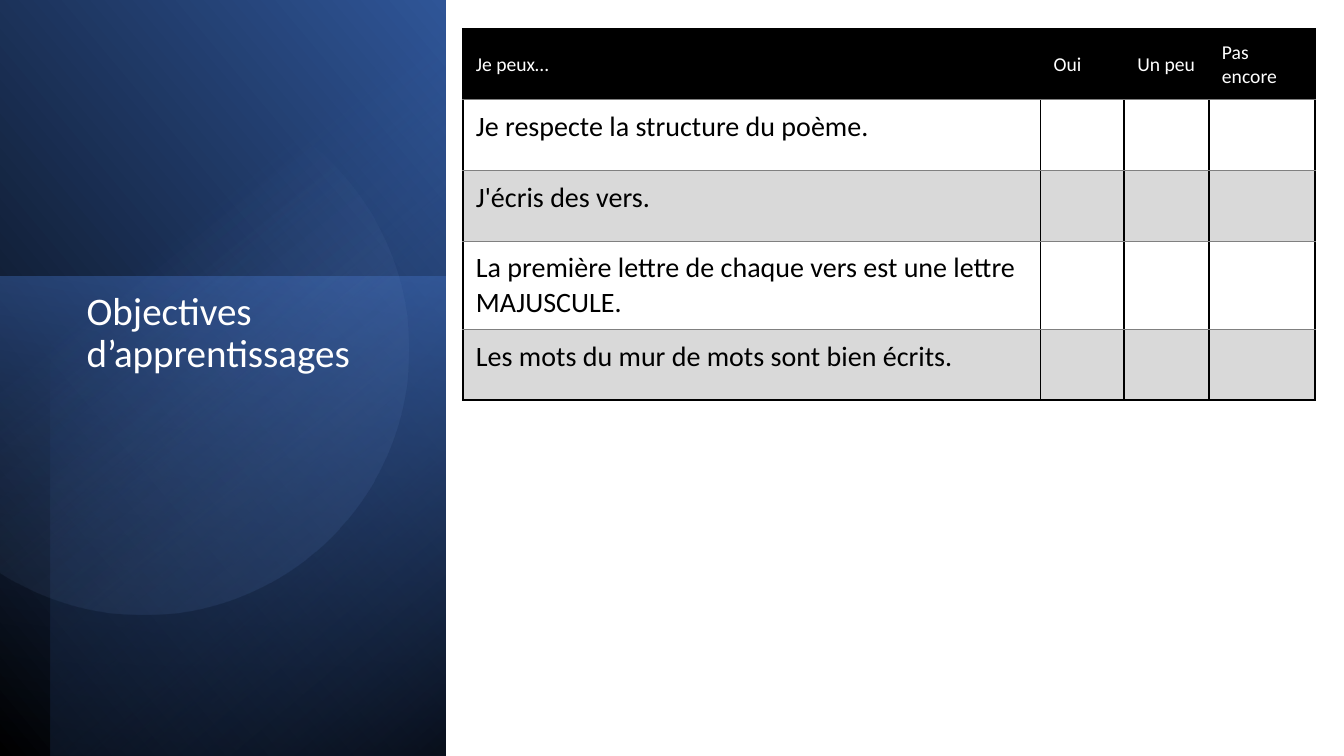
from dataclasses import dataclass
from math import cos, radians, sin, tan

from lxml.etree import SubElement as Sub
from pptx import Presentation
from pptx.dml.color import RGBColor as RGB
from pptx.enum.shapes import MSO_SHAPE as Kind
from pptx.enum.text import MSO_ANCHOR as Anchor, MSO_AUTO_SIZE as Fit, PP_ALIGN as Align
from pptx.oxml.ns import qn
from pptx.util import Inches, Pt


@dataclass(frozen=True)
class Theme:
    font: str = "Calibri"
    black: str = "000000"
    white: str = "FFFFFF"
    band: str = "D9D9D9"
    rule: str = "808080"
    navy: str = "203864"
    deep: str = "2F5597"
    blue: str = "4472C4"
    pale: str = "8FAADC"
    title: float = 27.9
    head: float = 14
    body: float = 20
    thick: float = 1.5
    thin: float = 0.5


def write(frame, text, size, color, font, spacing=None):
    frame.text = text
    para = frame.paragraphs[0]
    para.alignment = Align.LEFT
    if spacing:
        para.line_spacing = spacing
    style = para.font
    style.name, style.size, style.bold = font, Pt(size), False
    style.color.rgb = RGB.from_string(color)


def blend(shape, stops, angle):
    """Fill with a linear gradient; stops are (position, colour, opacity) in percent."""
    shape.shadow.inherit = False
    shape.line.fill.background()
    shape.fill.gradient()
    grad = shape.element.spPr.find(qn("a:gradFill"))
    grad.set("rotWithShape", "1")
    for child in list(grad):
        grad.remove(child)
    group = Sub(grad, qn("a:gsLst"))
    for pos, color, alpha in stops:
        stop = Sub(group, qn("a:gs"), pos=str(pos * 1000))
        tint = Sub(stop, qn("a:srgbClr"), val=color)
        if alpha < 100:
            Sub(tint, qn("a:alpha"), val=str(alpha * 1000))
    Sub(grad, qn("a:lin"), ang=str(angle * 60000), scaled="0")


def border(cell, **sides):
    """Draw cell edges; each side L, R, T or B is (colour, points)."""
    props = cell._tc.get_or_add_tcPr()
    for side, (color, width) in sides.items():
        line = Sub(props, qn(f"a:ln{side}"), w=str(Pt(width)))
        Sub(Sub(line, qn("a:solidFill")), qn("a:srgbClr"), val=color)


class Deck:
    def __init__(self, theme):
        self.theme = theme
        self.file = Presentation()
        self.file.slide_width, self.file.slide_height = Inches(13.33), Inches(7.5)
        self.slide = self.file.slides.add_slide(self.file.slide_layouts[5])

    def panel(self, box, turn, stops, angle, flip=False):
        shape = self.slide.shapes.add_shape(Kind.RECTANGLE, *map(Inches, box))
        shape.rotation = turn
        if flip:
            shape.element.spPr.find(qn("a:xfrm")).set("flipH", "1")
        blend(shape, stops, angle)

    def disc(self, x, y, radius, turns, spin, stops, angle):
        """Draw a cut circle as one curve between each two turns, then spin it."""
        def spot(turn, bulge=0):
            t = radians(turn)
            return (Inches(x + radius * (cos(t) - bulge * sin(t))),
                    Inches(y + radius * (sin(t) + bulge * cos(t))))

        dots = [spot(t) for t in turns]
        pen = self.slide.shapes.build_freeform(*dots[0])
        pen.add_line_segments(dots[1:], close=True)
        shape = pen.convert_to_shape()
        lines = list(shape.element.iter(qn("a:lnTo")))
        for line, start, end in zip(lines, turns, turns[1:]):
            bulge = 4 / 3 * tan(radians(end - start) / 4)
            line.tag = qn("a:cubicBezTo")
            line.remove(line[0])
            for px, py in (spot(start, bulge), spot(end, -bulge), spot(end)):
                Sub(line, qn("a:pt"), x=str(px - shape.left), y=str(py - shape.top))
        shape.rotation = spin
        blend(shape, stops, angle)

    def title(self, text, left, top, width, height):
        look, box = self.theme, self.slide.shapes.title
        box.left, box.top, box.width, box.height = map(Inches, (left, top, width, height))
        frame = box.text_frame
        frame.word_wrap, frame.auto_size = True, Fit.NONE
        frame.vertical_anchor = Anchor.TOP
        write(frame, text, look.title, look.white, look.font, spacing=0.9)
        box.element.getparent().append(box.element)

    def table(self, rows, left, top, widths, step, height):
        size = map(Inches, (left, top, sum(widths), height))
        frame = self.slide.shapes.add_table(len(rows), len(widths), *size)
        grid = frame.table
        grid.horz_banding = False
        for col, width in zip(grid.columns, widths):
            col.width = Inches(width)
        for r, row in enumerate(rows):
            grid.rows[r].height = Inches(step)
            for c, text in enumerate(row):
                self.cell(grid.cell(r, c), text, r, len(rows) - 1)
        frame.height = Inches(height)

    def cell(self, cell, text, row, last):
        look, head = self.theme, row == 0
        edge, rule = (look.black, look.thick), (look.rule, look.thin)
        border(cell, L=edge, R=edge, T=edge if head else rule, B=edge if row == last else rule)
        if head or row % 2 == 0:
            cell.fill.solid()
            cell.fill.fore_color.rgb = RGB.from_string(look.black if head else look.band)
        else:
            cell.fill.background()
        cell.margin_left, cell.margin_right = Inches(0.13), Inches(0.12 if head else 0.08)
        cell.margin_top = cell.margin_bottom = Inches(0.1)
        cell.vertical_anchor = Anchor.MIDDLE if head else Anchor.TOP
        size, color = (look.head, look.white) if head else (look.body, look.black)
        write(cell.text_frame, text, size, color, look.font)


def main():
    look = Theme()
    deck = Deck(look)
    deck.panel((-1.55, 1.55, 7.52, 4.42), 90,
               [(0, look.black, 100), (100, look.deep, 100)], 310, flip=True)
    deck.panel((-0.17, 2.91, 4.76, 4.42), 270,
               [(0, look.blue, 50), (100, look.navy, 0)], 190)
    deck.panel((-1.29, 1.79, 7.5, 3.92), 270,
               [(0, look.black, 59), (69, look.blue, 0)], 220, flip=True)
    deck.disc(1.81, 3.94, 2.63, [-224.5, -180, -90, 0, 21.3], 101.6,
              [(39, look.pale, 0), (100, look.deep, 26)], 310)
    deck.title("Objectives d’apprentissages", 0.76, 2.84, 3.15, 1.33)

    goals = [
        "Je respecte la structure du poème.",
        "J'écris des vers.",
        "La première lettre de chaque vers est une lettre MAJUSCULE.",
        "Les mots du mur de mots sont bien écrits.",
    ]
    rows = [["Je peux…", "Oui", "Un peu", "Pas encore"]]
    rows += [[goal, "", "", ""] for goal in goals]
    deck.table(rows, 4.59, 0.29, [5.73, 0.83, 0.84, 1.05], 0.7, 3.71)
    deck.file.save("out.pptx")


if __name__ == "__main__":
    main()
